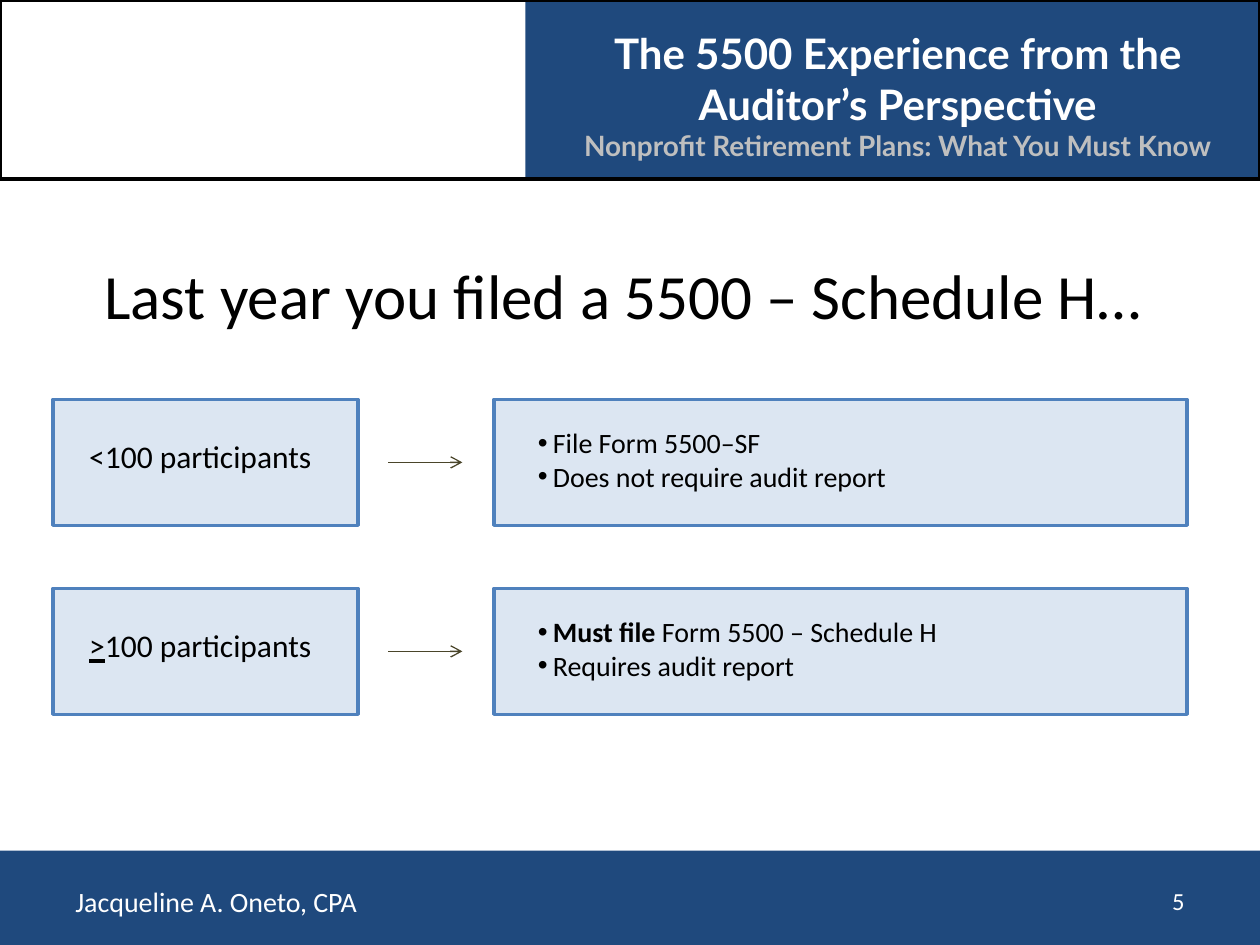
from lxml import etree
from pptx import Presentation
from pptx.dml.color import RGBColor
from pptx.enum import shapes, text
from pptx.oxml.ns import qn
from pptx.util import Inches, Pt

NAVY = RGBColor(0x1F, 0x49, 0x7D)
PALE_BLUE = RGBColor(0xDC, 0xE6, 0xF2)
BLUE = RGBColor(0x4F, 0x81, 0xBD)
OLIVE = RGBColor(0x4A, 0x45, 0x2A)
GREY = RGBColor(0xBF, 0xBF, 0xBF)
WHITE = RGBColor(0xFF, 0xFF, 0xFF)
BLACK = RGBColor(0, 0, 0)

LEFT, CENTER, RIGHT = text.PP_ALIGN.LEFT, text.PP_ALIGN.CENTER, text.PP_ALIGN.RIGHT
TOP, MIDDLE = text.MSO_ANCHOR.TOP, text.MSO_ANCHOR.MIDDLE


def add_bullet(paragraph, indent=0.12):
    props = paragraph._p.get_or_add_pPr()
    props.set("marL", str(Inches(indent)))
    props.set("indent", str(-Inches(indent)))
    etree.SubElement(props, qn("a:buFont")).set("typeface", "Arial")
    etree.SubElement(props, qn("a:buChar")).set("char", "•")


def write(paragraph, runs, size=18, font="Calibri", color=BLACK, align=LEFT,
          bold=False, bullet=False):
    """Fill a paragraph with runs of (words, style), style being "", "b" or "u"."""
    if bullet:
        add_bullet(paragraph)
    paragraph.alignment = align
    for words, style in runs:
        run = paragraph.add_run()
        run.text = words
        run.font.size, run.font.name = Pt(size), font
        run.font.color.rgb = color
        run.font.bold = bold or style == "b"
        run.font.underline = style == "u"


def add_text(slide, box, lines, anchor=TOP, **style):
    """Place a text box; each line is a list of runs."""
    frame = slide.shapes.add_textbox(*map(Inches, box)).text_frame
    frame.word_wrap = True
    frame.vertical_anchor = anchor
    for i, runs in enumerate(lines):
        paragraph = frame.add_paragraph() if i else frame.paragraphs[0]
        write(paragraph, runs, **style)
    return frame


def add_rect(slide, box, fill=None, line=None):
    rect = slide.shapes.add_shape(shapes.MSO_SHAPE.RECTANGLE, *map(Inches, box))
    rect.shadow.inherit = False
    if fill is None:
        rect.fill.background()
    else:
        rect.fill.solid()
        rect.fill.fore_color.rgb = fill
    if line is None:
        rect.line.fill.background()
    else:
        rect.line.color.rgb = line
        rect.line.width = Pt(2)


def add_arrow(slide, left, right, y):
    arrow = slide.shapes.add_connector(
        shapes.MSO_CONNECTOR.STRAIGHT, Inches(left), Inches(y), Inches(right), Inches(y))
    arrow.line.color.rgb = OLIVE
    arrow.line.width = Pt(0.75)
    etree.SubElement(arrow.line._get_or_add_ln(), qn("a:tailEnd")).set("type", "arrow")
    etree.SubElement(arrow._element.spPr, qn("a:effectLst"))


def add_header(slide, left, top, width, height):
    panel = 4.17
    add_rect(slide, (left + panel, top, width - panel, height), fill=NAVY)
    add_rect(slide, (left, top, width, height), line=BLACK)
    frame = add_text(slide, (left + 4.25, top + 0.17, 5.75, 1.58),
                     [[("The 5500 Experience from the Auditor’s Perspective", "")]],
                     size=24, font="Lato", color=WHITE, align=CENTER, bold=True)
    write(frame.add_paragraph(), [("Nonprofit Retirement Plans: What You Must Know", "")],
          size=16, font="Lato", color=GREY, align=CENTER, bold=True)


def add_title(slide, *box):
    title = slide.shapes.title
    title.left, title.top, title.width, title.height = map(Inches, box)
    frame = title.text_frame
    frame.auto_size = text.MSO_AUTO_SIZE.NONE
    frame.vertical_anchor = MIDDLE
    write(frame.paragraphs[0], [("Last year you filed a 5500 – Schedule H… ", "")],
          size=36, align=CENTER)


def add_rule(slide, left, top, width, height, condition, actions):
    """A condition box, an arrow and a box of resulting actions."""
    condition_width, actions_width = 2.42, 5.5
    actions_left = left + width - actions_width
    add_rect(slide, (left, top, condition_width, height), PALE_BLUE, BLUE)
    add_text(slide, (left, top + 0.25, 2.34, 0.42), [condition], align=CENTER)
    add_rect(slide, (actions_left, top, actions_width, height), PALE_BLUE, BLUE)
    add_text(slide, (actions_left + 0.25, top + 0.16, 5.08, 0.64), actions,
             size=16, bullet=True)
    add_arrow(slide, left + 2.66, left + 3.25, top + height / 2)


def add_footer(slide, left, top, width, height):
    add_rect(slide, (left, top, width, height), fill=NAVY)
    add_text(slide, (left + 0.5, top + 0.25, 5.17, 0.3),
             [[("Jacqueline A. Oneto, CPA", "")]], MIDDLE, size=16, color=WHITE)
    add_text(slide, (left + 7.17, top + 0.2, 2.33, 0.4),
             [[("5", "")]], MIDDLE, size=14, color=WHITE, align=RIGHT)


RULES = [
    ([("<100 participants", "")],
     [[("File Form 5500–SF", "")],
      [("Does not require audit report", "")]]),
    ([(">", "u"), ("100 participants", "")],
     [[("Must file ", "b"), ("Form 5500 – Schedule H", "")],
      [("Requires audit report", "")]]),
]


def main():
    deck = Presentation()
    deck.slide_width, deck.slide_height = Inches(10), Inches(7.5)
    slide = deck.slides.add_slide(deck.slide_layouts[5])

    # Header band, title and footer band
    add_header(slide, 0, 0, 10, 1.42)
    add_title(slide, 0, 1.75, 10, 1.17)
    add_footer(slide, 0, 6.75, 10, 0.75)

    # One row for each filing rule
    for row, (condition, actions) in enumerate(RULES):
        add_rule(slide, 0.42, 3.17 + 1.5 * row, 9, 1, condition, actions)

    deck.save("out.pptx")


if __name__ == "__main__":
    main()
